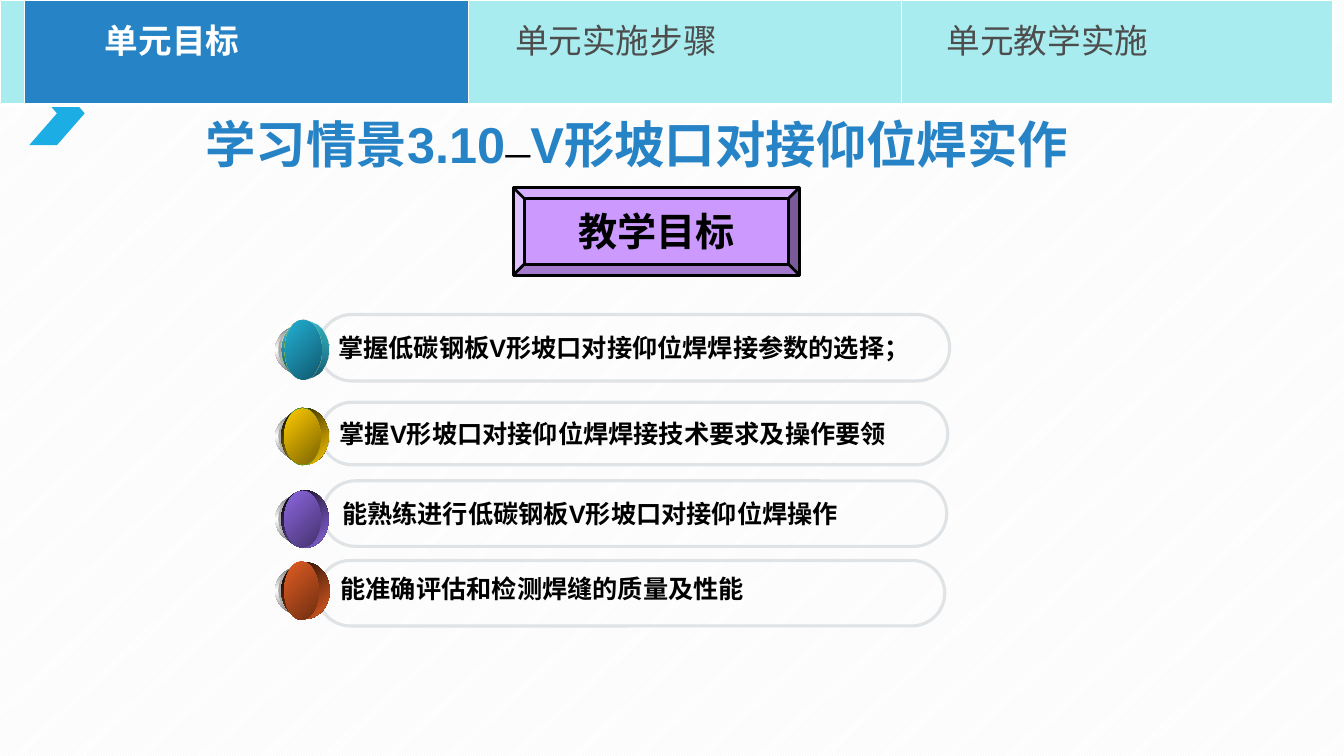
from lxml import etree
from pptx import Presentation
from pptx.dml.color import RGBColor
from pptx.enum.dml import MSO_PATTERN
from pptx.enum.shapes import MSO_SHAPE as Shape
from pptx.enum.text import MSO_ANCHOR as Anchor, PP_ALIGN as Align
from pptx.oxml import parse_xml
from pptx.oxml.ns import nsdecls, qn
from pptx.util import Inches, Pt

WHITE = RGBColor(0xFF, 0xFF, 0xFF)
BLACK = RGBColor(0x00, 0x00, 0x00)
HATCH = RGBColor(0xF2, 0xF2, 0xF2)
GRAY = RGBColor(0x4D, 0x4D, 0x4D)
BLUE = RGBColor(0x26, 0x83, 0xC6)
SKY = RGBColor(0x1C, 0xAD, 0xE4)
AQUA = RGBColor(0xA8, 0xEC, 0xEF)
LILAC = RGBColor(0xCC, 0x99, 0xFF)
OUTLINE = RGBColor(0xDF, 0xE3, 0xE5)
STEEL = RGBColor(0x76, 0x76, 0x76)
SILVER = RGBColor(0xA2, 0xA2, 0xA2)
GREEN = RGBColor(0x6E, 0xAC, 0x1C)
DARK_GREEN = RGBColor(0x54, 0x84, 0x15)
CYAN = RGBColor(0x21, 0xB3, 0xE1)
GOLD = RGBColor(0xFF, 0xCC, 0x00)
VIOLET = RGBColor(0x8D, 0x67, 0xE1)
ORANGE = RGBColor(0xE3, 0x5E, 0x23)
DARK_CYAN = RGBColor(0x10, 0x57, 0x6D)
DARK_GOLD = RGBColor(0x7C, 0x63, 0x00)
DARK_VIOLET = RGBColor(0x45, 0x32, 0x6D)
DARK_ORANGE = RGBColor(0x6E, 0x2E, 0x11)

LATIN, CHINESE = "Arial", "Noto Sans CJK SC"
GOAL_FORMAT = {"size": Pt(18), "bold": True, "name": LATIN}
TITLE_FORMAT = {"size": Pt(36), "bold": True, "name": LATIN}

TABS = [  # width, text, left margin, fill, font colour, bold
    (0.24, "", 0, AQUA, GRAY, False),
    (4.41, "单元目标", 0.8, BLUE, WHITE, True),
    (4.29, "单元实施步骤", 0.46, AQUA, GRAY, False),
    (4.28, "单元教学实施", 0.45, AQUA, GRAY, False),
]
GOALS = [  # text, capsule box, ball centre, layer widths, layer heights, rim stops, face stops
    ("掌握低碳钢板V形坡口对接仰位焊焊接参数的选择；", (3.16, 3.12, 6.26, 0.66), 3.47,
     (0.54, 0.48, 0.47, 0.47, 0.37, 0.37), (0.49, 0.44, 0.55, 0.57, 0.59, 0.6),
     ((CYAN, 77), (RGBColor(0x0F, 0x53, 0x68), 100)), ((CYAN, 95), (DARK_CYAN, 100))),
    ("掌握V形坡口对接仰位焊焊接技术要求及操作要领", (3.18, 3.99, 6.22, 0.62), 4.33,
     (0.54, 0.48, 0.47, 0.47, 0.36, 0.36), (0.47, 0.41, 0.55, 0.56, 0.57, 0.55),
     (BLACK, GOLD), (GOLD, DARK_GOLD)),
    ("能熟练进行低碳钢板V形坡口对接仰位焊操作", (3.2, 4.77, 6.19, 0.65), 5.15,
     (0.53, 0.47, 0.47, 0.47, 0.36, 0.36), (0.49, 0.43, 0.55, 0.57, 0.56, 0.56),
     (BLACK, VIOLET), (VIOLET, DARK_VIOLET)),
    ("", (3.15, 5.56, 6.22, 0.65), 5.86,
     (0.5, 0.44, 0.47, 0.48, 0.34, 0.34), (0.48, 0.43, 0.55, 0.56, 0.57, 0.58),
     (BLACK, ORANGE), (ORANGE, DARK_ORANGE)),
]
LAYER_LEFTS = (2.73, 2.76, 2.79, 2.79, 2.82, 2.82)


def add_run(paragraph, text, color, values):
    run = paragraph.add_run()
    run.text = text
    for name, value in values.items():
        setattr(run.font, name, value)
    run.font.color.rgb = color
    east_asian = etree.SubElement(run.font._element, qn("a:ea"))
    east_asian.set("typeface", CHINESE)


def add_shape(shapes, kind, box, fill=None, line=None, line_width=0):
    shape = shapes.add_shape(kind, *map(Inches, box))
    shape.shadow.inherit = False
    if fill is None:
        shape.fill.background()
    else:
        shape.fill.solid()
        shape.fill.fore_color.rgb = fill
    if line is None:
        shape.line.fill.background()
    else:
        shape.line.color.rgb = line
        shape.line.width = Pt(line_width)
    return shape


def write_label(shape, text, align, values):
    frame = shape.text_frame
    frame.word_wrap = False
    frame.vertical_anchor = Anchor.MIDDLE
    paragraph = frame.paragraphs[0]
    paragraph.alignment = align
    add_run(paragraph, text, BLACK, values)


def add_text(slide, box, runs):
    frame = slide.shapes.add_textbox(*map(Inches, box)).text_frame
    frame.word_wrap = True
    for text, color, values in runs:
        add_run(frame.paragraphs[0], text, color, values)


def set_gradient(shape, stops, angle):
    """Spread the stops evenly; a stop is a colour or a (colour, opacity percent) pair."""
    stop_xml = ""
    for index, stop in enumerate(stops):
        color, opacity = (stop, 100) if isinstance(stop, RGBColor) else stop
        position = 100000 * index // (len(stops) - 1)
        stop_xml += (f'<a:gs pos="{position}"><a:srgbClr val="{color}">'
                     f'<a:alpha val="{opacity * 1000}"/></a:srgbClr></a:gs>')
    gradient = parse_xml(f'<a:gradFill {nsdecls("a")} rotWithShape="1"><a:gsLst>{stop_xml}</a:gsLst>'
                         f'<a:lin ang="{angle * 60000}" scaled="1"/></a:gradFill>')
    properties = shape._element.spPr
    properties.replace(properties.find(qn("a:noFill")), gradient)


def add_goal(slide, text, box, center, widths, heights, rim, face):
    shapes = slide.shapes.add_group_shape().shapes
    capsule = add_shape(shapes, Shape.ROUNDED_RECTANGLE, box, line=OUTLINE, line_width=2.25)
    capsule.adjustments[0] = 0.5
    if text:
        write_label(capsule, text, Align.LEFT, GOAL_FORMAT)
    gradients = [
        ((STEEL, WHITE, STEEL), 90),
        ((SILVER, WHITE, SILVER), 0),
        ((WHITE, GREEN, WHITE), 45),
        (rim, 90 if rim[0] != BLACK else 45),
        ((DARK_GREEN, GREEN, DARK_GREEN), 315),
        (face, 45),
    ]
    for left, width, height, (stops, angle) in zip(LAYER_LEFTS, widths, heights, gradients):
        layer = add_shape(shapes, Shape.OVAL, (left, center - height / 2, width, height))
        set_gradient(layer, stops, angle)


def set_borders(cell):
    properties = cell._tc.get_or_add_tcPr()
    for side, width in {"L": 1, "R": 1, "T": 1, "B": 3}.items():
        properties.append(parse_xml(
            f'<a:ln{side} {nsdecls("a")} w="{Pt(width)}"><a:solidFill>'
            f'<a:srgbClr val="{WHITE}"/></a:solidFill></a:ln{side}>'))


def add_tabs(slide):
    total = sum(tab[0] for tab in TABS)
    table = slide.shapes.add_table(1, len(TABS), 0, 0, Inches(total), Inches(1.04)).table
    table.first_row = table.horz_banding = False
    for index, (width, text, margin, fill, color, bold) in enumerate(TABS):
        table.columns[index].width = Inches(width)
        cell = table.cell(0, index)
        set_borders(cell)
        cell.fill.solid()
        cell.fill.fore_color.rgb = fill
        cell.margin_left = Inches(margin)
        if text:
            paragraph = cell.text_frame.paragraphs[0]
            paragraph.line_spacing = 1.2
            add_run(paragraph, text, color, {"size": Pt(24), "bold": bold, "name": CHINESE})


def main():
    presentation = Presentation()
    presentation.slide_width, presentation.slide_height = Inches(13.33), Inches(7.5)
    slide = presentation.slides.add_slide(presentation.slide_layouts[6])
    background = slide.background.fill
    background.patterned()
    background.pattern = MSO_PATTERN.LIGHT_UPWARD_DIAGONAL
    background.fore_color.rgb = HATCH
    background.back_color.rgb = WHITE

    add_shape(slide.shapes, Shape.CHEVRON, (0.29, 0.81, 0.55, 0.63), SKY)
    add_text(slide, (1.94, 1.07, 9.37, 0.71), [
        ("学习情景3.10", BLUE, TITLE_FORMAT),
        ("—", BLACK, {**TITLE_FORMAT, "size": Pt(18)}),
        ("V形坡口对接仰位焊实作", BLUE, TITLE_FORMAT),
    ])
    heading = add_shape(slide.shapes, Shape.BEVEL, (5.09, 1.86, 2.84, 0.87), LILAC, BLACK, 2)
    write_label(heading, "教学目标", Align.CENTER, {**GOAL_FORMAT, "size": Pt(28)})
    for goal in GOALS:
        add_goal(slide, *goal)
    add_text(slide, (3.28, 5.64, 4.46, 0.4), [("能准确评估和检测焊缝的质量及性能", BLACK, GOAL_FORMAT)])
    add_tabs(slide)
    presentation.save("out.pptx")


if __name__ == "__main__":
    main()
